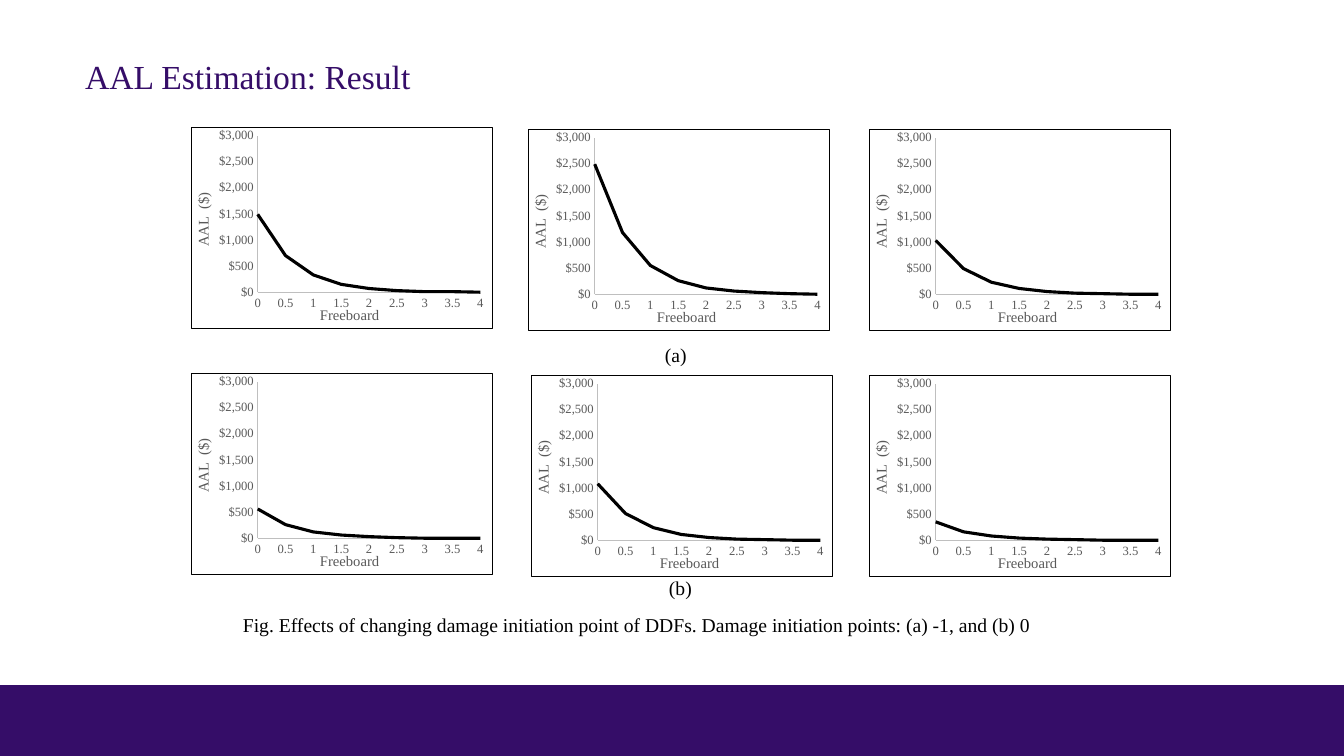
from pptx import Presentation
from pptx import util as u
from pptx.chart.data import XyChartData
from pptx.dml.color import RGBColor
from pptx.enum import chart as ch, shapes, text
from pptx.oxml import parse_xml
from pptx.oxml.ns import nsdecls

FONT = "Times New Roman"
PURPLE, BLACK, GRAY, AXIS = "350D68", "000000", "595959", "BFBFBF"

TITLE = ("AAL Estimation: Result", (75, 13, 1210, 126))
BAND = (0, 685, 1344, 71)
CAPTIONS = [
    ("Fig. Effects of changing damage initiation point of DDFs. "
     "Damage initiation points: (a) -1, and (b) 0", (233, 608, 814, 34)),
    ("(a)", (655, 338, 46, 34)),
    ("(b)", (659, 571, 54, 34)),
]
FREEBOARD = [0, 0.5, 1, 1.5, 2, 2.5, 3, 3.5, 4]
CHART_SIZE = (302, 202)
PLOT = {"x": 0.22, "y": 0.04, "w": 0.74, "h": 0.78}
LOSSES = [
    ((191, 127), [1490, 700, 330, 150, 70, 30, 10, 10, 0]),
    ((528, 129), [2490, 1180, 550, 260, 120, 60, 30, 10, 0]),
    ((869, 129), [1030, 490, 230, 110, 50, 20, 10, 0, 0]),
    ((191, 373), [560, 260, 120, 60, 30, 10, 0, 0, 0]),
    ((531, 375), [1080, 510, 240, 110, 50, 20, 10, 0, 0]),
    ((869, 375), [350, 160, 80, 40, 20, 10, 0, 0, 0]),
]


def px(*lengths):
    return [u.Emu(round(n * 914400 / 100.8)) for n in lengths]


def color(value):
    return RGBColor.from_string(value)


def style(font, size, fill):
    font.name, font.size, font.bold = FONT, u.Pt(size), False
    font.color.rgb = color(fill)


def write(frame, words, size=14, fill=BLACK, anchor=None, align=None):
    frame.text = words
    if anchor is not None:
        frame.word_wrap = True
        frame.vertical_anchor = anchor
    paragraph = frame.paragraphs[0]
    paragraph.alignment = align
    style(paragraph.runs[0].font, size, fill)


def format_axis(axis, name, top, step, number_format):
    axis.minimum_scale, axis.maximum_scale, axis.major_unit = 0, top, step
    axis.has_major_gridlines = False
    axis.major_tick_mark = axis.minor_tick_mark = ch.XL_TICK_MARK.NONE
    axis.tick_labels.number_format = number_format
    axis.tick_labels.number_format_is_linked = False
    style(axis.tick_labels.font, 9, GRAY)
    axis.format.line.color.rgb = color(AXIS)
    axis.format.line.width = u.Pt(0.75)
    write(axis.axis_title.text_frame, name, size=10.5, fill=GRAY)


def frame_chart(chart):
    space = chart._chartSpace
    area = space.xpath("c:chart/c:plotArea")[0]
    for layout in area.xpath("c:layout"):
        area.remove(layout)
    modes = "".join(f'<c:{k}Mode val="edge"/>' for k in "xy")
    sides = "".join(f'<c:{k} val="{v}"/>' for k, v in PLOT.items())
    area.insert(0, parse_xml(
        f'<c:layout {nsdecls("c")}><c:manualLayout><c:layoutTarget val="inner"/>'
        f'{modes}{sides}</c:manualLayout></c:layout>'))
    space.xpath("c:chart")[0].addnext(parse_xml(
        f'<c:spPr {nsdecls("c", "a")}><a:noFill/><a:ln w="9525"><a:solidFill>'
        f'<a:srgbClr val="{BLACK}"/></a:solidFill></a:ln></c:spPr>'))
    turned = space.xpath("c:chart/c:plotArea/c:valAx/c:title//a:bodyPr")[-1]
    turned.set("rot", "-5400000")
    turned.set("vert", "horz")


def add_loss_chart(slide, corner, losses):
    data = XyChartData()
    series = data.add_series("Series 1")
    for point in zip(FREEBOARD, losses):
        series.add_data_point(*point)
    chart = slide.shapes.add_chart(ch.XL_CHART_TYPE.XY_SCATTER_LINES_NO_MARKERS,
                                   *px(*corner, *CHART_SIZE), data).chart
    chart.has_title = chart.has_legend = False
    style(chart.font, 10, BLACK)
    chart.plots[0].vary_by_categories = False
    curve = chart.plots[0].series[0]
    curve.smooth = False
    curve.format.line.color.rgb = color(BLACK)
    curve.format.line.width = u.Pt(2.25)
    format_axis(chart.category_axis, "Freeboard ", 4, 0.5, "General")
    format_axis(chart.value_axis, "AAL  ($)", 3000, 500, '"$"#,##0')
    frame_chart(chart)


def main():
    deck = Presentation()
    deck.slide_width, deck.slide_height = px(1344, 756)
    slide = deck.slides.add_slide(deck.slide_layouts[5])

    band = slide.shapes.add_shape(shapes.MSO_SHAPE.RECTANGLE, *px(*BAND))
    band.shadow.inherit = False
    band.fill.solid()
    band.fill.fore_color.rgb = color(PURPLE)
    band.line.fill.background()

    title = slide.shapes.title
    words, box = TITLE
    title.left, title.top, title.width, title.height = px(*box)
    write(title.text_frame, words, size=24, fill=PURPLE,
          anchor=text.MSO_ANCHOR.MIDDLE, align=text.PP_ALIGN.LEFT)

    for corner, losses in LOSSES:
        add_loss_chart(slide, corner, losses)
    for words, box in CAPTIONS:
        caption = slide.shapes.add_textbox(*px(*box))
        write(caption.text_frame, words, anchor=text.MSO_ANCHOR.TOP,
              align=text.PP_ALIGN.LEFT)
    deck.save("out.pptx")


if __name__ == "__main__":
    main()
